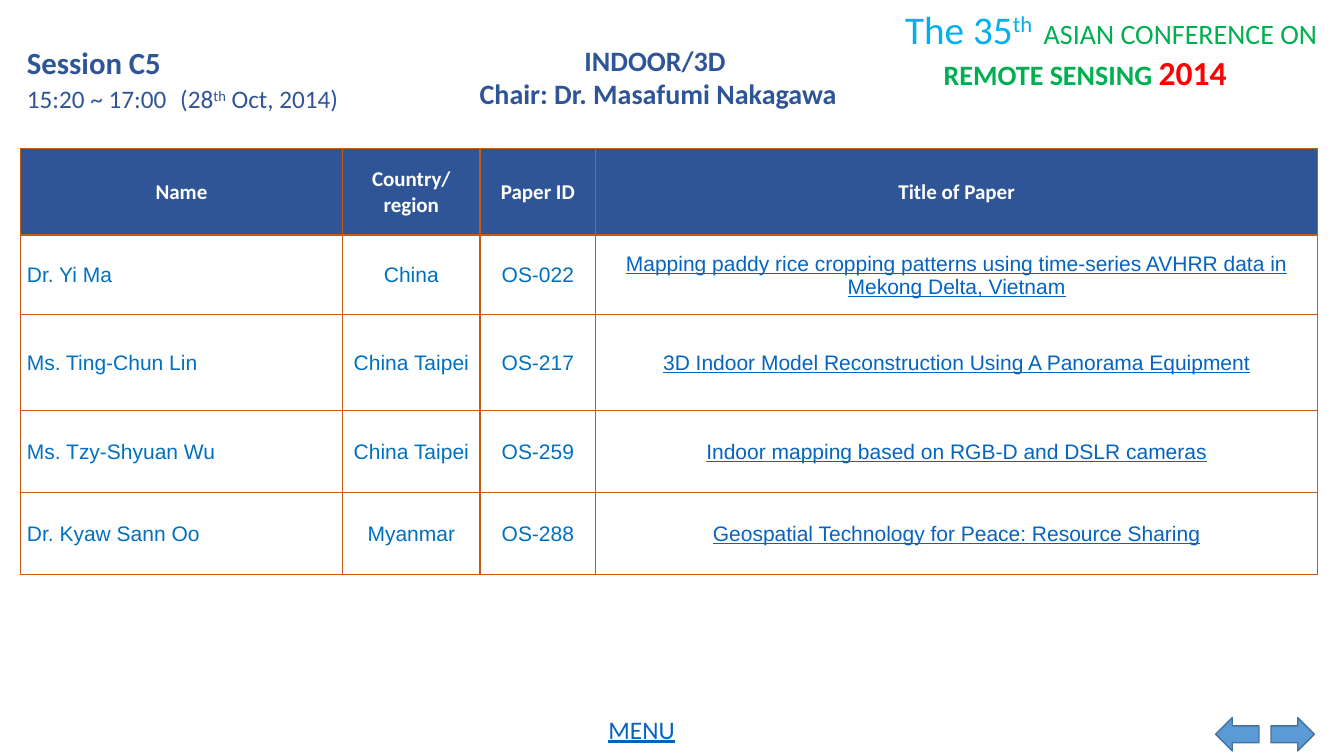
from dataclasses import dataclass

from lxml.etree import SubElement
from pptx import Presentation
from pptx.dml.color import RGBColor
from pptx.enum.shapes import MSO_SHAPE as Shape
from pptx.enum.text import MSO_ANCHOR as Anchor, MSO_AUTO_SIZE as AutoSize, PP_ALIGN as Align
from pptx.oxml.ns import qn
from pptx.util import Pt

NAVY, BLUE, LINK = "2F5597", "0070C0", "0563C1"
SKY, GREEN, RED, WHITE = "00B0F0", "00B050", "FF0000", "FFFFFF"
BORDER, ARROW_FILL, ARROW_LINE = "C55A11", "5B9BD5", "43739E"


@dataclass
class Run:
    text: str
    size: float
    color: str
    bold: bool = False
    underline: bool = False
    superscript: bool = False
    font: str = "Calibri"


@dataclass
class Line:
    runs: list[Run]
    align: Align = Align.LEFT
    indent: float = 0
    spacing: float = 1.0
    before: float = 0


@dataclass
class Box:
    left: float
    top: float
    width: float
    height: float
    lines: list[Line]
    anchor: Anchor = Anchor.TOP
    grows: bool = True


@dataclass
class Paper:
    name: str
    region: str
    number: str
    title: str


def rgb(color: str) -> RGBColor:
    return RGBColor.from_string(color)


def write(frame, lines: list[Line]) -> None:
    for i, line in enumerate(lines):
        paragraph = frame.add_paragraph() if i else frame.paragraphs[0]
        paragraph.alignment = line.align
        paragraph.line_spacing = line.spacing
        paragraph.space_before = Pt(line.before)
        if line.indent:
            paragraph._p.get_or_add_pPr().set("marL", str(Pt(line.indent)))
        for part in line.runs:
            run = paragraph.add_run()
            run.text = part.text
            run.font.name, run.font.size = part.font, Pt(part.size)
            run.font.bold, run.font.underline = part.bold, part.underline
            run.font.color.rgb = rgb(part.color)
            if part.superscript:
                run._r.get_or_add_rPr().set("baseline", "30000")


def add_box(slide, box: Box) -> None:
    frame = slide.shapes.add_textbox(Pt(box.left), Pt(box.top), Pt(box.width), Pt(box.height)).text_frame
    frame.word_wrap = True
    frame.auto_size = AutoSize.SHAPE_TO_FIT_TEXT if box.grows else AutoSize.NONE
    frame.vertical_anchor = box.anchor
    write(frame, box.lines)


def fill_cell(cell, lines: list[Line], fill: str) -> None:
    cell.margin_left = cell.margin_right = cell.margin_top = Pt(0.7)
    cell.margin_bottom = Pt(0)
    cell.vertical_anchor = Anchor.MIDDLE
    properties = cell._tc.get_or_add_tcPr()
    for side in ("lnL", "lnR", "lnT", "lnB"):
        edge = SubElement(properties, qn(f"a:{side}"), w=str(Pt(1)))
        SubElement(SubElement(edge, qn("a:solidFill")), qn("a:srgbClr"), val=BORDER)
    cell.fill.solid()
    cell.fill.fore_color.rgb = rgb(fill)
    write(cell.text_frame, lines)


def add_papers(slide, papers: list[Paper]) -> None:
    widths = [230.4, 98, 82.8, 515.5]
    heights = [62, 57, 68.5, 58.5, 58.5]
    table = slide.shapes.add_table(len(heights), len(widths), Pt(14.4), Pt(105.9),
                                   Pt(sum(widths)), Pt(sum(heights))).table
    table.horz_banding = False
    for column, width in zip(table.columns, widths):
        column.width = Pt(width)
    for row, height in zip(table.rows, heights):
        row.height = Pt(height)

    # Header row
    headings = [["Name"], ["Country/", "region"], ["Paper ID"], ["Title of Paper"]]
    for c, words in enumerate(headings):
        lines = [Line([Run(word, 15, WHITE, bold=True)], Align.CENTER) for word in words]
        fill_cell(table.cell(0, c), lines, NAVY)

    # One row per paper
    for r, paper in enumerate(papers, start=1):
        for c, text in enumerate((paper.name, paper.region, paper.number)):
            line = Line([Run(text, 15, BLUE, font="Arial")], Align.CENTER if c else Align.LEFT)
            fill_cell(table.cell(r, c), [line], WHITE)
        table.cell(r, 0).margin_left = Pt(4.9)
        title = Run(paper.title, 15, LINK, underline=True, font="Arial")
        fill_cell(table.cell(r, 3), [Line([title], Align.CENTER)], WHITE)


def add_arrow(slide, kind: Shape, left: float) -> None:
    arrow = slide.shapes.add_shape(kind, Pt(left), Pt(512.6), Pt(31), Pt(23.8))
    arrow.shadow.inherit = False
    arrow.fill.solid()
    arrow.fill.fore_color.rgb = rgb(ARROW_FILL)
    arrow.line.color.rgb = rgb(ARROW_LINE)
    arrow.line.width = Pt(1)


BANNER = Box(639.4, 0, 320.4, 70.6, [
    Line([Run("The 35", 28, SKY), Run("th ", 28, SKY, superscript=True),
          Run(" ASIAN CONFERENCE ON", 20, GREEN)]),
    Line([Run("REMOTE SENSING ", 20, GREEN, bold=True), Run("2014", 24, RED, bold=True)], indent=27.5),
])
SESSION = [
    Box(12.2, 27.4, 184.3, 33.8, [Line([Run("Session C5", 22, NAVY, bold=True)])]),
    Box(12.2, 56.2, 184.3, 28.8, [Line([Run("15:20 ~ 17:00", 18, NAVY)])]),
    Box(121.7, 56.2, 184.3, 28.8, [Line([
        Run("(28", 18, NAVY), Run("th", 18, NAVY, superscript=True), Run(" Oct, 2014)", 18, NAVY)])]),
    Box(244.1, 27.4, 452.2, 55.4, [
        Line([Run(text, 20, NAVY, bold=True)], Align.CENTER)
        for text in ("INDOOR/3D ", "Chair: Dr. Masafumi Nakagawa")]),
]
MENU = Box(414.7, 508.3, 87.1, 27.4, [
    Line([Run("MENU", 18, LINK, underline=True)], Align.CENTER, spacing=0.9, before=10),
], Anchor.MIDDLE, grows=False)
PAPERS = [
    Paper("Dr. Yi Ma", "China", "OS-022",
          "Mapping paddy rice cropping patterns using time-series AVHRR data in Mekong Delta, Vietnam"),
    Paper("Ms. Ting-Chun Lin", "China Taipei", "OS-217",
          "3D Indoor Model Reconstruction Using A Panorama Equipment"),
    Paper("Ms. Tzy-Shyuan Wu", "China Taipei", "OS-259",
          "Indoor mapping based on RGB-D and DSLR cameras"),
    Paper("Dr. Kyaw Sann Oo", "Myanmar", "OS-288",
          "Geospatial Technology for Peace: Resource Sharing"),
]


def main() -> None:
    deck = Presentation()
    deck.slide_width, deck.slide_height = Pt(960), Pt(540)
    slide = deck.slides.add_slide(deck.slide_layouts[6])

    # Conference banner, programme and session heading
    add_box(slide, BANNER)
    add_papers(slide, PAPERS)
    for box in SESSION:
        add_box(slide, box)

    # Navigation
    add_arrow(slide, Shape.RIGHT_ARROW, 907.9)
    add_box(slide, MENU)
    add_arrow(slide, Shape.LEFT_ARROW, 868.3)

    deck.save("out.pptx")


if __name__ == "__main__":
    main()
